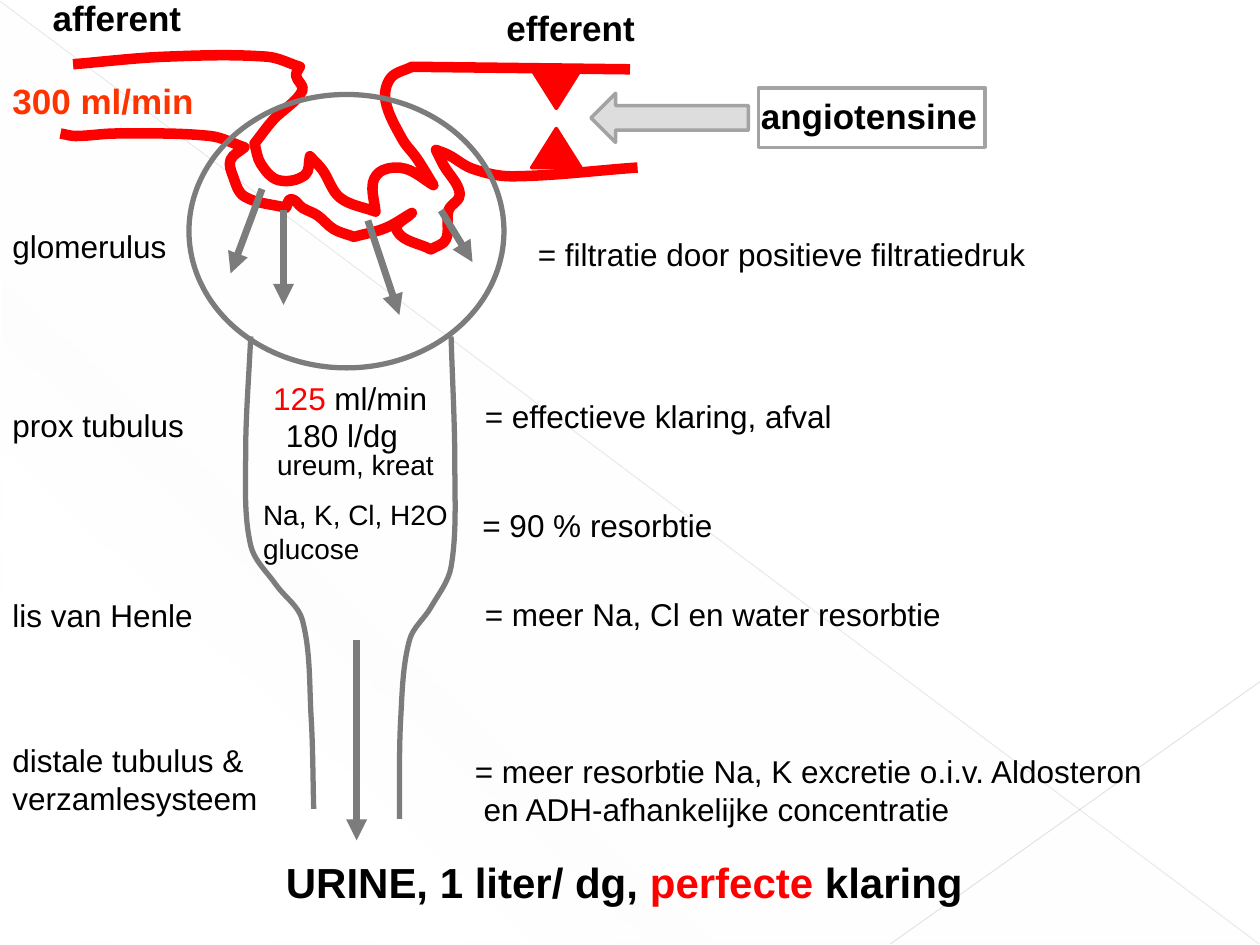
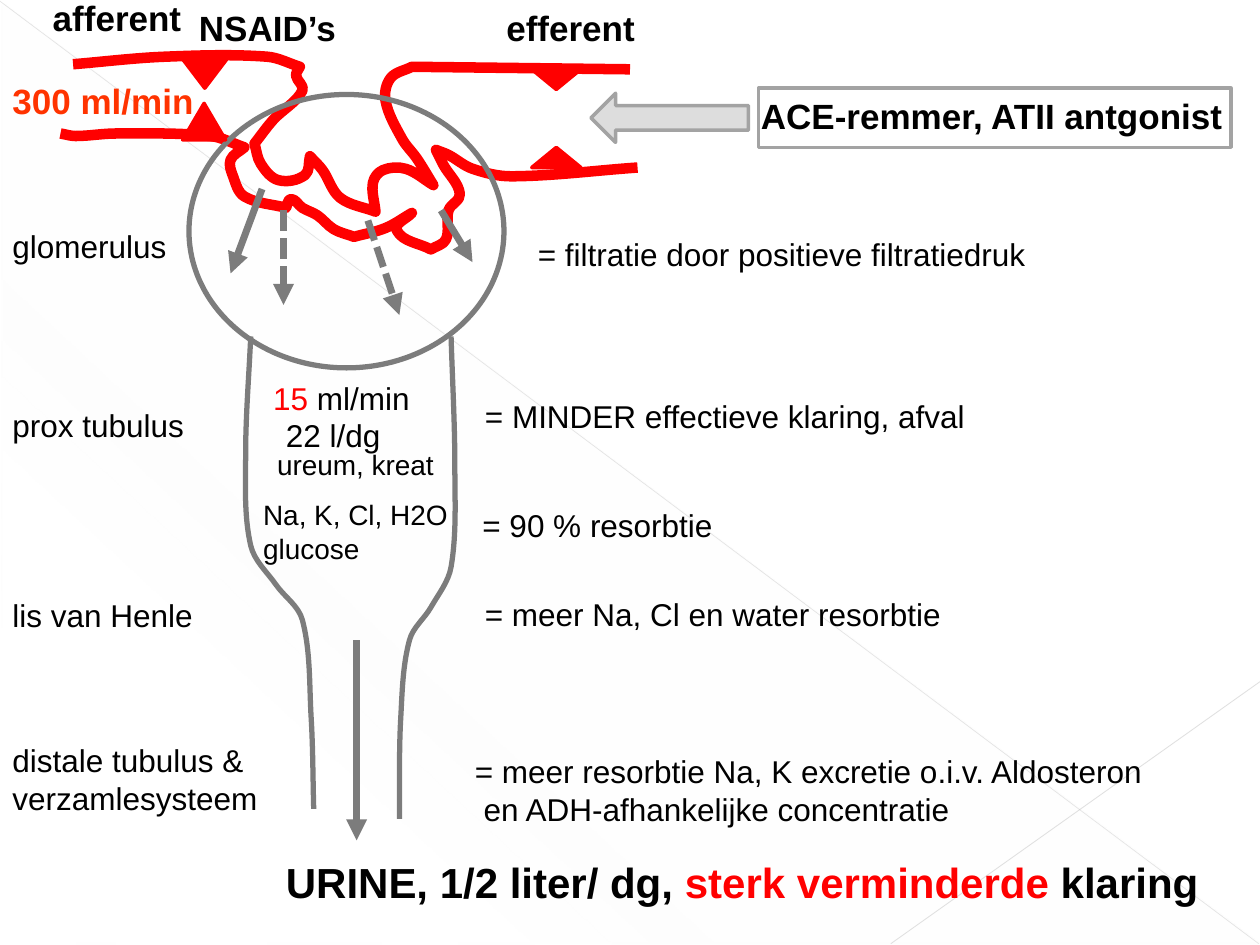
from dataclasses import dataclass
from itertools import pairwise
from math import dist

from lxml import etree
from pptx import Presentation
from pptx import util as u
from pptx.dml.color import RGBColor
from pptx.enum import dml, shapes, text
from pptx.oxml.ns import qn

COLUMNS, ROWS = 1000, 750
CELL = u.Inches(10) // COLUMNS


@dataclass(frozen=True)
class Theme:
    font: str = "Arial"
    ink: str = "000000"
    blood: str = "FF0000"
    flow: str = "FF3300"
    nephron: str = "7C7C7C"
    frame: str = "A3A3A3"
    arrow: str = "DDDDDD"
    haze: str = "F8F8F8"
    small: int = 16
    body: int = 18
    strong: int = 20
    conclusion: int = 24


@dataclass(frozen=True)
class Box:
    left: int
    top: int
    width: int
    height: int

    def point(self, x, y):
        return round((self.left + x) * CELL), round((self.top + y) * CELL)

    def at(self, x, y, width, height):
        return *self.point(x, y), width * CELL, height * CELL


@dataclass(frozen=True)
class Situation:
    agent: str
    frame_width: int
    agent_width: int
    efferent_narrowing: int
    filtrate: tuple
    clearance: tuple
    urine: tuple
    weak_filtration: bool = False
    afferent_agent: str = ""


THEME = Theme()
SLIDE = Box(0, 0, COLUMNS, ROWS)
CIRCULATION = Box(0, 0, COLUMNS, 200)
GLOMERULUS = Box(150, 75, 250, 217)
TUBULE = Box(192, 267, 172, 400)
SEGMENTS = Box(0, 175, 215, 478)
PROCESSES = Box(367, 182, 555, 481)
CONCLUSION = Box(217, 675, 751, 51)

UPPER_VESSEL = {
    "afferent roof": [(58, 51), (131, 45), (212, 45), (238, 53)],
    "entry": [(235, 60), (240, 72), (217, 95), (202, 114)],
    "first loop": [(207, 130), (221, 143), (242, 139), (246, 124)],
    "second loop": [(256, 135), (270, 157), (298, 168)],
    "third loop": [(296, 145), (304, 135), (322, 134), (344, 147)],
    "exit": [(331, 126), (319, 110), (306, 80), (310, 62), (327, 53)],
    "efferent roof": [(500, 55)],
}
LOWER_VESSEL = {
    "afferent floor": [(48, 106), (60, 108), (92, 106), (167, 108), (194, 117)],
    "entry": [(183, 127), (185, 140), (194, 156), (227, 165)],
    "first loop": [(231, 158), (240, 165), (252, 171), (265, 182), (281, 188)],
    "second loop": [(306, 181), (327, 169)],
    "third loop": [(315, 183), (342, 198)],
    "exit": [(354, 190), (356, 167), (365, 154), (352, 131), (346, 119)],
    "efferent floor": [(356, 123), (375, 134), (406, 140), (506, 133)],
}
LEFT_WALL = {
    "proximal tubule": [(7, 0), (3, 93), (7, 166), (27, 197), (48, 225), (55, 303), (57, 375)],
}
RIGHT_WALL = {
    "proximal tubule": [(166, 0), (169, 103), (166, 183), (150, 215), (133, 241), (126, 304), (125, 383)],
}

SITUATIONS = (
    Situation("angiotensine", 180, 250, 31,
              (("*125* ml/min", 142), ("180 l/dg", 109)),
              ("= effectieve klaring, afval", 296),
              ("URINE, 1 liter/ dg, *perfecte* klaring", 562)),
    Situation("ACE-remmer, ATII antgonist", 375, 406, 16,
              (("*15* ml/min", 130), ("22 l/dg", 96)),
              ("= MINDER effectieve klaring, afval", 405),
              ("URINE, 1/2 liter/ dg, *sterk verminderde* klaring", 751),
              weak_filtration=True, afferent_agent="NSAID’s"),
)


def assign(target, **formats):
    for name, value in formats.items():
        setattr(target, name, value)


def rgb(colour):
    return RGBColor.from_string(colour)


def set_line(part, colour, points):
    part.line.color.rgb = rgb(colour)
    part.line.width = u.Pt(points)


def set_alpha(colour_element, percent):
    etree.SubElement(colour_element, qn("a:alpha"), val=str(percent * 1000))


def write(slide, box, x, y, width, words, size=THEME.body, colour=THEME.ink, bold=False, wrap=False):
    lines = words.split("\n")
    height = round((len(lines) * size * 1.2 / 72 + 0.1) * 100)
    frame = slide.shapes.add_textbox(*box.at(x, y, width, height)).text_frame
    assign(frame, word_wrap=wrap, auto_size=text.MSO_AUTO_SIZE.SHAPE_TO_FIT_TEXT)
    for index, line in enumerate(lines):
        paragraph = frame.add_paragraph() if index else frame.paragraphs[0]
        for order, piece in enumerate(line.split("*")):
            if piece:
                run = paragraph.add_run()
                run.text = piece
                assign(run.font, name=THEME.font, size=u.Pt(size), bold=bold)
                run.font.color.rgb = rgb(THEME.blood if order % 2 else colour)


def add_outline(slide, preset, place, line, points, fill=None, rotation=0):
    part = slide.shapes.add_shape(preset, *place)
    part.shadow.inherit = False
    part.rotation = rotation
    set_line(part, line, points)
    if fill:
        part.fill.solid()
        part.fill.fore_color.rgb = rgb(fill)
    else:
        part.fill.background()
    return part


def add_line(slide, start, end, colour, points):
    line = slide.shapes.add_connector(shapes.MSO_CONNECTOR.STRAIGHT, *start, *end)
    set_line(line, colour, points)
    etree.SubElement(line.element.spPr, qn("a:effectLst"))
    return line


def add_flow(slide, start, end, dashed=False):
    flow = add_line(slide, start, end, THEME.nephron, 4)
    if dashed:
        flow.line.dash_style = dml.MSO_LINE.SQUARE_DOT
    etree.SubElement(flow.element.spPr.find(qn("a:ln")), qn("a:tailEnd"), type="triangle")


def handle(anchor, before, after, reach):
    share = reach / (dist(before, after) or 1)
    return tuple(a + (q - p) * share for a, p, q in zip(anchor, before, after))


def smooth(anchors):
    padded = [anchors[0], *anchors, anchors[-1]]
    controls = []
    for index, (start, end) in enumerate(pairwise(anchors)):
        reach = dist(start, end) / 3
        controls += [handle(start, padded[index], end, reach),
                     handle(end, start, padded[index + 3], -reach),
                     end]
    return controls


def add_curve(slide, box, sections, colour, points):
    route = []
    for anchors in sections.values():
        route = route or anchors[:1]
        route = route + smooth(route[-1:] + [anchor for anchor in anchors if anchor != route[-1]])
    start, *controls = [box.point(*spot) for spot in route]
    builder = slide.shapes.build_freeform(*start)
    builder.add_line_segments(controls, close=False)
    curve = builder.convert_to_shape()
    curve.shadow.inherit = False
    curve.fill.background()
    set_line(curve, colour, points)
    outline = next(curve.element.iter(qn("a:path")))
    segments = outline.findall(qn("a:lnTo"))
    for first in range(0, len(segments), 3):
        bezier = etree.SubElement(outline, qn("a:cubicBezTo"))
        for segment in segments[first:first + 3]:
            bezier.append(segment[0])
            outline.remove(segment)


def add_backdrop(master, slide, box):
    haze = add_outline(slide, shapes.MSO_SHAPE.RIGHT_TRIANGLE,
                       box.at(1, 2, box.width - 1, box.height - 2), THEME.haze, 1)
    haze.line.fill.background()
    haze.fill.gradient()
    haze.fill.gradient_angle = 227
    stops = next(haze.element.iter(qn("a:gsLst")))
    for stop in list(stops):
        stops.remove(stop)
    for position, alpha in ((0, 10), (70, 8), (100, 1)):
        stop = etree.SubElement(stops, qn("a:gs"), pos=str(position * 1000))
        set_alpha(etree.SubElement(stop, qn("a:srgbClr"), val=THEME.haze), alpha)
    parts = [haze]
    for start, end, colour, points, alpha in (((0, 1), (999, 749), "B4B4B4", 0.39, 35),
                                              ((1000, 541), (707, 749), "BDBDBD", 0.47, 45)):
        ray = add_line(slide, box.point(*start), box.point(*end), colour, points)
        set_alpha(next(ray.element.iter(qn("a:srgbClr"))), alpha)
        parts.append(ray)
    for part in parts:
        master.element.cSld.spTree.append(part.element)


def draw_vessels(slide, box, situation):
    add_outline(slide, shapes.MSO_SHAPE.RECTANGLE, box.at(602, 70, situation.frame_width, 47), THEME.frame, 2)
    for vessel in (UPPER_VESSEL, LOWER_VESSEL):
        add_curve(slide, box, vessel, THEME.blood, 6)


def draw_glomerulus(slide, box, situation):
    add_outline(slide, shapes.MSO_SHAPE.OVAL, box.at(0, 0, box.width, box.height), THEME.nephron, 3)
    for start, end, weakens in (((58, 75), (33, 142), False), ((75, 92), (75, 167), True),
                                ((142, 100), (167, 175), True), ((200, 92), (225, 133), False)):
        add_flow(slide, box.point(*start), box.point(*end), weakens and situation.weak_filtration)


def draw_tubule(slide, box, situation):
    for wall in (LEFT_WALL, RIGHT_WALL):
        add_curve(slide, box, wall, THEME.nephron, 3)
    add_flow(slide, box.point(91, 241), box.point(91, box.height))
    (per_minute, minute_width), (per_day, day_width) = situation.filtrate
    for x, y, width, contents, size in (
            (15, 29, minute_width, per_minute, THEME.body),
            (25, 58, day_width, per_day, THEME.body),
            (18, 83, 145, "ureum, kreat", THEME.small),
            (7, 123, 167, "Na, K, Cl, H2O\nglucose", THEME.small)):
        write(slide, box, x, y, width, contents, size)


def draw_regulation(slide, box, situation):
    strong = dict(size=THEME.strong, bold=True)
    write(slide, box, 32, -8, 122, "afferent", **strong)
    write(slide, box, 392, 0, 122, "efferent", **strong)
    write(slide, box, 0, 58, 165, "300 ml/min", colour=THEME.flow, **strong)
    narrowing = situation.efferent_narrowing
    constrictions = [(422, 133 - narrowing, 39, narrowing, 0), (422, 55, 39, narrowing, 180)]
    if situation.afferent_agent:
        constrictions += [(145, 82, 34, 29, 0), (145, 47, 35, 23, 180)]
        write(slide, box, 148, 0, 147, situation.afferent_agent, wrap=True, **strong)
    for *place, rotation in constrictions:
        add_outline(slide, shapes.MSO_SHAPE.ISOSCELES_TRIANGLE, box.at(*place),
                    THEME.blood, 2, THEME.blood, rotation)
    write(slide, box, 594, 70, situation.agent_width, situation.agent, wrap=True, **strong)
    add_outline(slide, shapes.MSO_SHAPE.RIGHT_ARROW, box.at(469, 74, 125, 39),
                THEME.frame, 2, THEME.arrow, 180)


def list_segments(slide, box):
    for y, width, segment in ((0, 142, "glomerulus"), (142, 156, "prox tubulus"), (293, 163, "lis van Henle"),
                              (408, box.width, "distale tubulus &\nverzamlesysteem")):
        write(slide, box, 0, y, width, segment)


def list_processes(slide, box, situation):
    clearance, clearance_width = situation.clearance
    for x, y, width, process in (
            (50, 0, 407, "= filtratie door positieve filtratiedruk"),
            (8, 128, clearance_width, clearance),
            (6, 215, 212, "= 90 % resorbtie"),
            (8, 285, 386, "= meer Na, Cl en water resorbtie"),
            (0, 410, box.width, "= meer resorbtie Na, K excretie o.i.v. Aldosteron\n"
                                " en ADH-afhankelijke concentratie")):
        write(slide, box, x, y, width, process)


def conclude(slide, box, situation):
    urine, width = situation.urine
    write(slide, box, 0, 0, width, urine, THEME.conclusion, bold=True)


def draw_nephron(slide, situation):
    draw_vessels(slide, CIRCULATION, situation)
    draw_glomerulus(slide, GLOMERULUS, situation)
    draw_tubule(slide, TUBULE, situation)
    list_segments(slide, SEGMENTS)
    list_processes(slide, PROCESSES, situation)
    conclude(slide, CONCLUSION, situation)
    draw_regulation(slide, CIRCULATION, situation)


def main():
    deck = Presentation()
    assign(deck, slide_width=COLUMNS * CELL, slide_height=ROWS * CELL)
    blank = deck.slide_layouts[6]
    slides = [deck.slides.add_slide(blank) for _ in SITUATIONS]
    add_backdrop(deck.slide_master, slides[0], SLIDE)
    for slide, situation in zip(slides, SITUATIONS):
        draw_nephron(slide, situation)
    deck.save("out.pptx")


if __name__ == "__main__":
    main()
